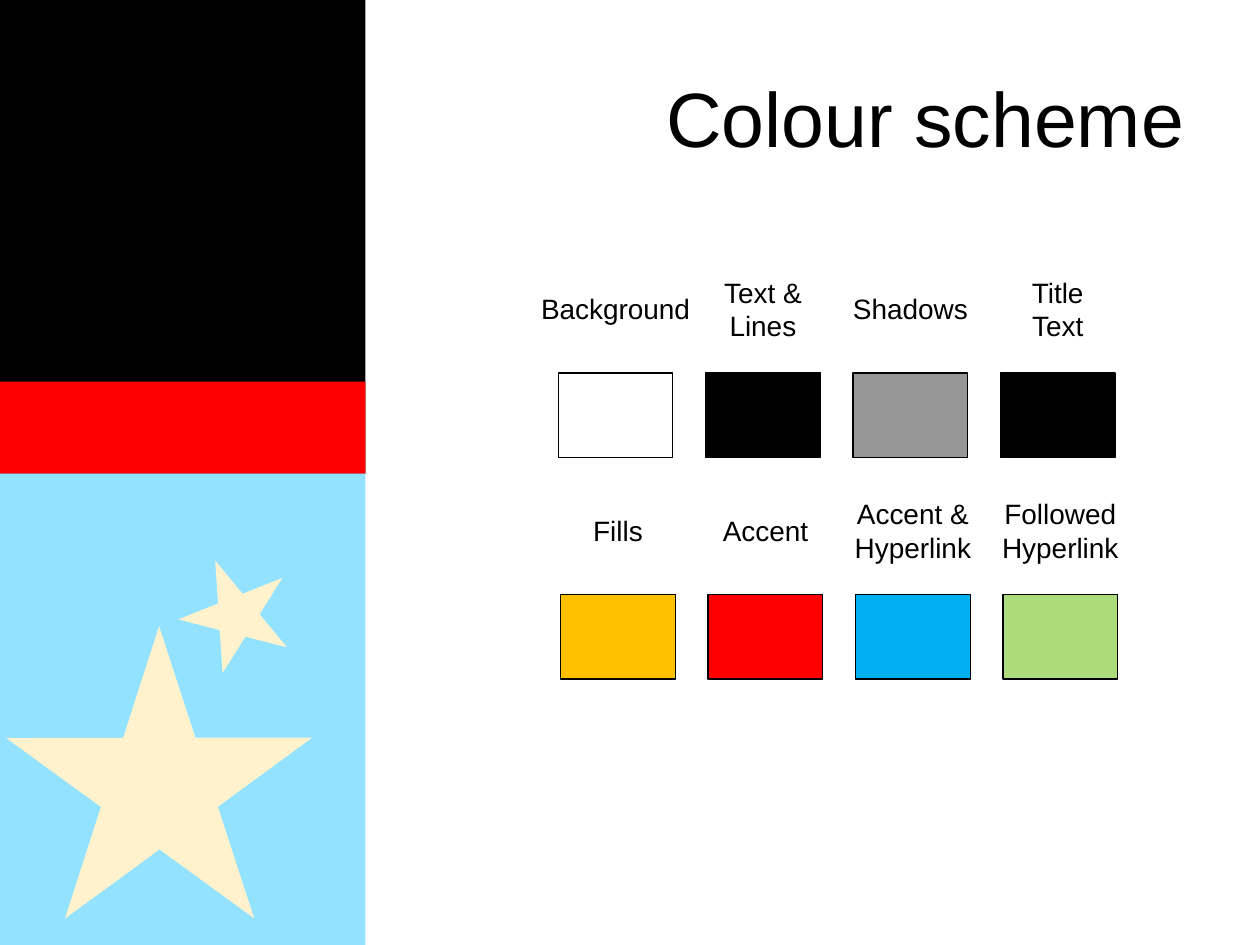
from dataclasses import dataclass

from pptx import Presentation
from pptx.dml.color import RGBColor
from pptx.enum.shapes import MSO_SHAPE
from pptx.enum.text import MSO_ANCHOR, MSO_AUTO_SIZE, PP_ALIGN
from pptx.slide import Slide
from pptx.util import Inches, Pt

RECTANGLE, STAR = MSO_SHAPE.RECTANGLE, MSO_SHAPE.STAR_5_POINT
MIDDLE = MSO_ANCHOR.MIDDLE
FIT_SHAPE = MSO_AUTO_SIZE.SHAPE_TO_FIT_TEXT
CENTER, RIGHT = PP_ALIGN.CENTER, PP_ALIGN.RIGHT

COLORS = {
    "white": "FFFFFF",
    "black": "000000",
    "gray": "969696",
    "red": "FF0000",
    "sky": "93E2FF",
    "cream": "FFF2CC",
    "gold": "FFC000",
    "blue": "00B0F0",
    "green": "ADDB7B",
}

BANDS = [(0, 3.76, "black"), (3.03, 0.73, "red"), (3.76, 3.76, "sky")]
STARS = [
    (1.42, 4.42, 0.89, 0.85, 338.3),
    (1.49, 4.49, 0.75, 0.72, 338.3),
    (0.05, 4.97, 2.43, 2.32, 359.9),
    (0.25, 5.16, 2.05, 1.96, 359.9),
]
SWATCH_WIDTH, SWATCH_HEIGHT, SWATCH_PITCH = 0.91, 0.67, 1.17
LABEL_RISE = 0.51
SWATCH_ROWS = [
    (4.43, 2.96, [("Background", 1.39, "white"), ("Text &\nLines", 0.84, "black"),
                  ("Shadows", 1.11, "gray"), ("Title\vText", 0.63, "black")]),
    (4.45, 4.72, [("Fills", 0.59, "gold"), ("Accent", 0.88, "red"),
                  ("Accent &\nHyperlink", 1.12, "blue"),
                  ("Followed\nHyperlink", 1.12, "green")]),
]


@dataclass
class SlideBuilder:
    """Draws styled elements on the current slide."""

    slide: Slide
    font: str = "Arial"
    text_color: str = "black"

    def color(self, name):
        return RGBColor.from_string(COLORS[name])

    def shape(self, kind, left, top, width, height, fill, line=None, rotation=0):
        shape = self.slide.shapes.add_shape(
            kind, Inches(left), Inches(top), Inches(width), Inches(height))
        shape.shadow.inherit = False
        shape.rotation = rotation
        shape.fill.solid()
        shape.fill.fore_color.rgb = self.color(fill)
        if line:
            shape.line.color.rgb = self.color(line)
            shape.line.width = Pt(0.75)
        else:
            shape.line.fill.background()

    def text(self, text, left, top, width, height, size, alignment):
        box = self.slide.shapes.add_textbox(
            Inches(left), Inches(top), Inches(width), Inches(height))
        frame = box.text_frame
        frame.word_wrap = True
        frame.vertical_anchor = MIDDLE
        frame.text = text
        for paragraph in frame.paragraphs:
            paragraph.alignment = alignment
            paragraph.font.name = self.font
            paragraph.font.size = Pt(size)
            paragraph.font.color.rgb = self.color(self.text_color)
        return frame

    def label(self, text, center, middle, width):
        height = 0.37 if len(text.splitlines()) == 1 else 0.64
        frame = self.text(
            text, center - width / 2, middle - height / 2, width, height, 16, CENTER)
        frame.word_wrap = False
        frame.auto_size = FIT_SHAPE
        frame.margin_left = frame.margin_right = 0

    def swatch(self, label, label_width, fill, left, top):
        self.shape(RECTANGLE, left, top, SWATCH_WIDTH, SWATCH_HEIGHT, fill, "black")
        self.label(label, left + SWATCH_WIDTH / 2, top - LABEL_RISE, label_width)


def main():
    presentation = Presentation()
    presentation.slide_width, presentation.slide_height = Inches(10), Inches(7.5)
    builder = SlideBuilder(presentation.slides.add_slide(presentation.slide_layouts[6]))

    for top, height, fill in BANDS:
        builder.shape(RECTANGLE, 0, top, 2.9, height, fill)
    for left, top, width, height, rotation in STARS:
        builder.shape(STAR, left, top, width, height, "cream", rotation=rotation)

    builder.text("Colour scheme", 0.53, 0.3, 8.97, 1.25, 44, RIGHT)

    for row_left, top, swatches in SWATCH_ROWS:
        for column, (label, label_width, fill) in enumerate(swatches):
            left = row_left + column * SWATCH_PITCH
            builder.swatch(label, label_width, fill, left, top)

    presentation.save("out.pptx")


if __name__ == "__main__":
    main()
